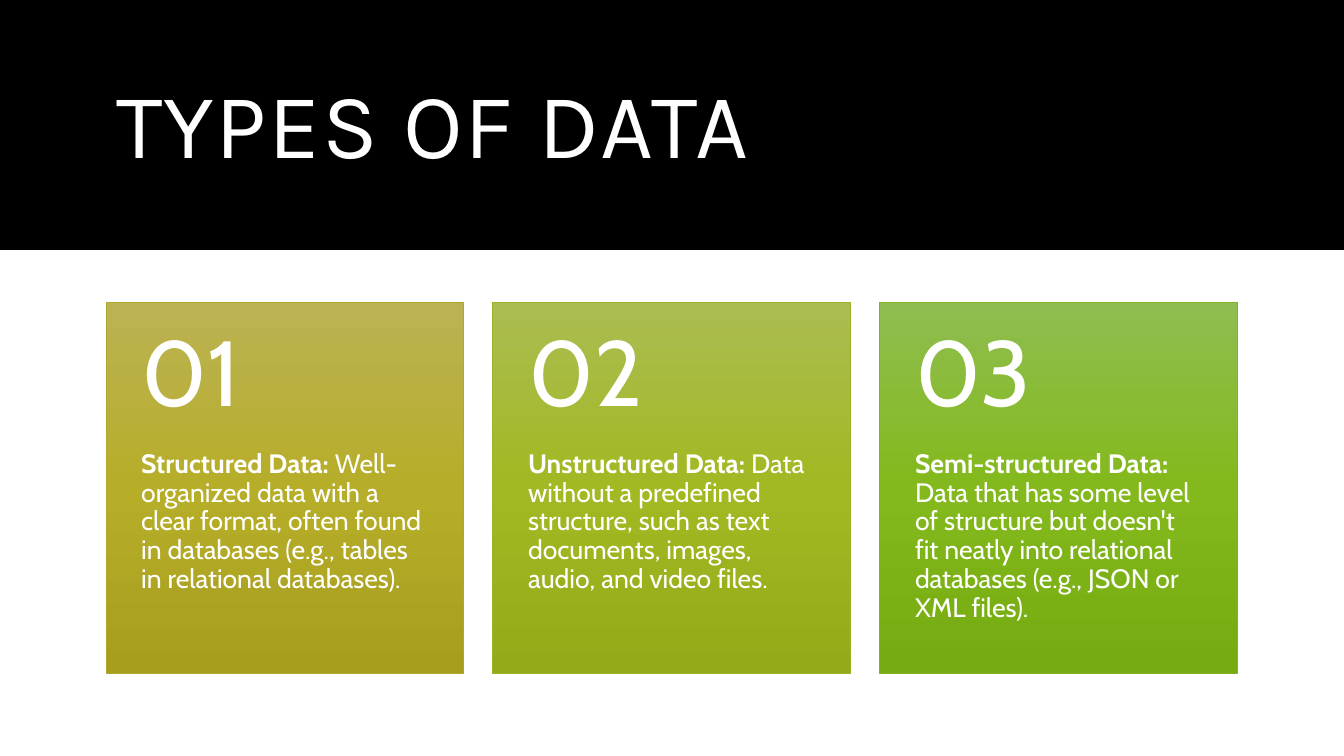
from copy import deepcopy

from pptx import Presentation
from pptx.dml.color import RGBColor
from pptx.enum.shapes import MSO_SHAPE
from pptx.enum.text import MSO_ANCHOR, MSO_AUTO_SIZE, PP_ALIGN
from pptx.util import Cm, Pt

RECT = MSO_SHAPE.RECTANGLE
TOP, MIDDLE = MSO_ANCHOR.TOP, MSO_ANCHOR.MIDDLE
LEFT = PP_ALIGN.LEFT
NO_FIT = MSO_AUTO_SIZE.NONE

BLACK = RGBColor(0x00, 0x00, 0x00)
WHITE = RGBColor(0xFF, 0xFF, 0xFF)
# Three gradient stops from top to bottom, then the outline
GOLD = [RGBColor.from_string(c) for c in ("BBB254", "B6AD29", "A89E1E", "B0A72F")]
OLIVE = [RGBColor.from_string(c) for c in ("ABBC52", "A3B822", "96A918", "9FB129")]
GREEN = [RGBColor.from_string(c) for c in ("90BD50", "83B91C", "77AB12", "81B223")]

SLIDE_W, SLIDE_H = Cm(33.87), Cm(19.05)
BAND_H = Cm(6.3)
MARGIN = Cm(2.67)
CARD_TOP, CARD_W, CARD_H = Cm(7.62), Cm(9.02), Cm(9.35)
CARD_PITCH = Cm(9.75)
NUMBER_H = Cm(3.73)
SIDE_INSET, NUMBER_INSET, BODY_INSET = Cm(0.89), Cm(0.46), Cm(0.91)

CARDS = [
    ("Structured Data: ",
     "Well-organized data with a clear format, often found in databases "
     "(e.g., tables in relational databases).", GOLD),
    ("Unstructured Data: ",
     "Data without a predefined structure, such as text documents, images, "
     "audio, and video files.", OLIVE),
    ("Semi-structured Data: ",
     "Data that has some level of structure but doesn't fit neatly into "
     "relational databases (e.g., JSON or XML files).", GREEN),
]


def set_attrs(obj, **values):
    for name, value in values.items():
        setattr(obj, name, value)


def add_run(p, text, font, size, bold=False):
    r = p.add_run()
    r.text = text
    set_attrs(r.font, name=font, size=Pt(size), bold=bold)
    r.font.color.rgb = WHITE
    return r


def first_paragraph(tf):
    p = tf.paragraphs[0]
    set_attrs(p, alignment=LEFT, line_spacing=0.9)
    return p


def add_band(slide):
    sp = slide.shapes.add_shape(RECT, 0, 0, SLIDE_W, BAND_H)
    sp.shadow.inherit = False
    sp.fill.solid()
    sp.fill.fore_color.rgb = BLACK
    sp.line.fill.background()
    # Send the band behind the title
    slide.shapes._spTree.insert(2, sp._element)


def format_title(title, text):
    set_attrs(title, left=MARGIN, top=Cm(0.89), width=Cm(28.52), height=Cm(4.72))
    tf = title.text_frame
    set_attrs(tf, vertical_anchor=MIDDLE, word_wrap=True, auto_size=NO_FIT)
    r = add_run(first_paragraph(tf), text, "Karla", 66)
    r.font._element.set("spc", "120")


def fill_gradient(fill, colors):
    fill.gradient()
    fill.gradient_angle = 270
    # The default gradient has two stops; add a third
    last = fill.gradient_stops[-1]._gs
    last.addnext(deepcopy(last))
    for stop, position, color in zip(fill.gradient_stops, (0, 0.5, 1), colors):
        stop.position = position
        stop.color.rgb = color


def add_text(shapes, left, top, height, runs, anchor, inset_top, inset_bottom):
    tf = shapes.add_textbox(left, top, CARD_W, height).text_frame
    set_attrs(tf, word_wrap=True, auto_size=NO_FIT, vertical_anchor=anchor,
              margin_left=SIDE_INSET, margin_right=SIDE_INSET,
              margin_top=inset_top, margin_bottom=inset_bottom)
    p = first_paragraph(tf)
    for text, size, bold in runs:
        add_run(p, text, "Cabin", size, bold)


def add_card(slide, index, heading, body, colors):
    left = MARGIN + index * CARD_PITCH
    shapes = slide.shapes.add_group_shape().shapes
    sp = shapes.add_shape(RECT, left, CARD_TOP, CARD_W, CARD_H)
    sp.shadow.inherit = False
    fill_gradient(sp.fill, colors[:3])
    sp.line.color.rgb = colors[3]
    sp.line.width = Pt(0.5)
    add_text(shapes, left, CARD_TOP + NUMBER_H, CARD_H - NUMBER_H,
             [(heading, 19, True), (body, 19, False)], TOP, 0, BODY_INSET)
    add_text(shapes, left, CARD_TOP, NUMBER_H,
             [(f"{index + 1:02d}", 66, False)], MIDDLE, NUMBER_INSET, NUMBER_INSET)


def main():
    prs = Presentation()
    set_attrs(prs, slide_width=SLIDE_W, slide_height=SLIDE_H)
    slide = prs.slides.add_slide(prs.slide_layouts[5])

    # Header
    add_band(slide)
    format_title(slide.shapes.title, "TYPES OF DATA")

    # Cards
    for i, (heading, body, colors) in enumerate(CARDS):
        add_card(slide, i, heading, body, colors)

    prs.save("out.pptx")


if __name__ == "__main__":
    main()
